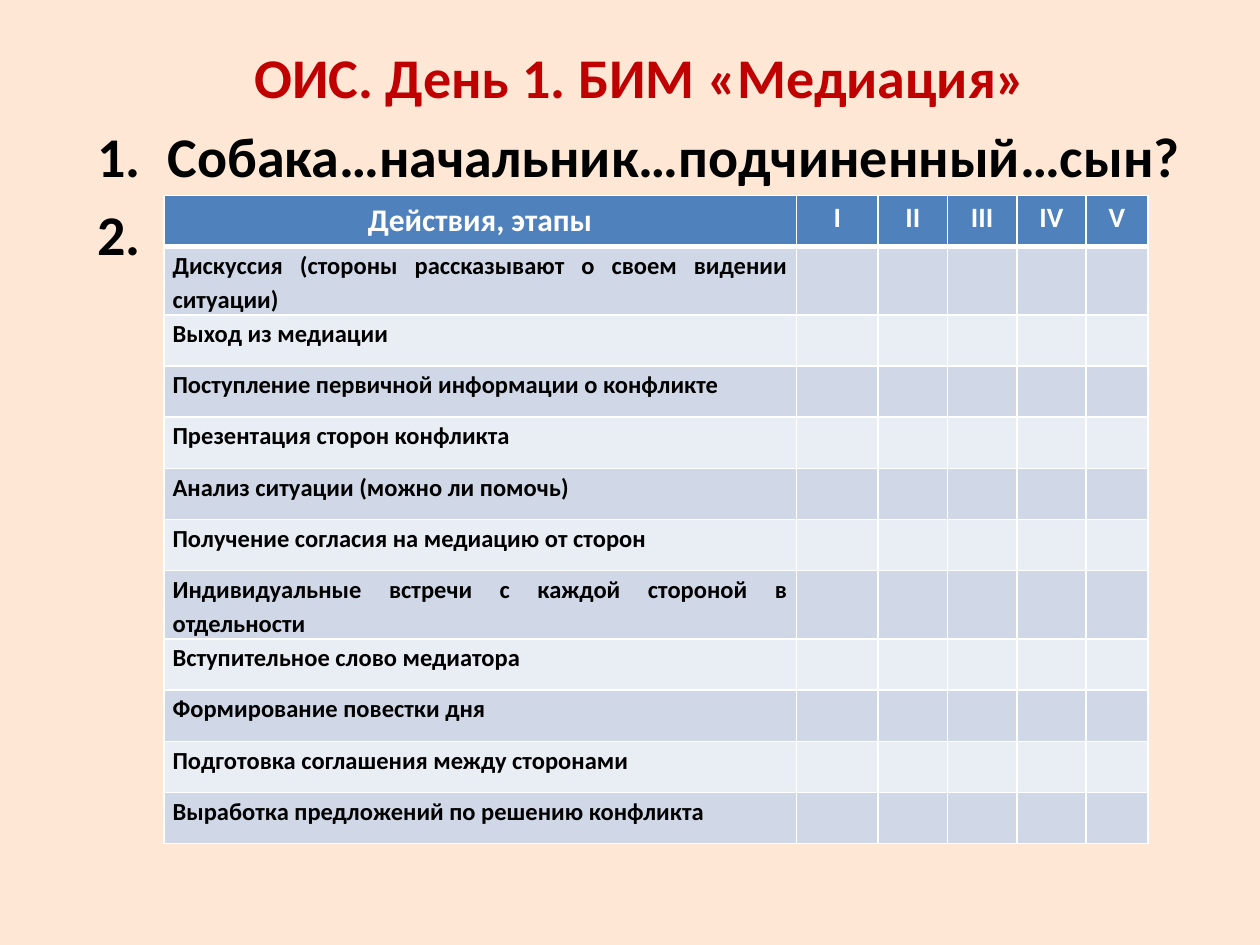
from dataclasses import dataclass

from lxml.etree import SubElement
from pptx import Presentation
from pptx.dml.color import RGBColor as RGB
from pptx.enum.text import PP_ALIGN as Align
from pptx.oxml import parse_xml
from pptx.oxml.ns import nsdecls, qn
from pptx.util import Inches, Pt


@dataclass(frozen=True)
class Theme:
    font: str = "Calibri"
    background: str = "FEE7D4"
    heading: str = "C00000"
    text: str = "000000"
    white: str = "FFFFFF"
    header_fill: str = "4F81BD"
    bands: tuple = ("D0D8E8", "E9EDF4")
    heading_size: int = 32
    actions_size: int = 18
    numeral_size: int = 16
    stage_size: int = 14


theme = Theme()


def style(paragraph, size, color, align):
    paragraph.alignment = align
    for run in paragraph.runs:
        run.font.name = theme.font
        run.font.size = Pt(size)
        run.font.bold = True
        run.font.color.rgb = RGB.from_string(color)


def paint_cell(cell, fill, top, bottom):
    cell.fill.solid()
    cell.fill.fore_color.rgb = RGB.from_string(fill)
    widths = {"lnL": 1, "lnR": 1, "lnT": top, "lnB": bottom}
    for position, (side, width) in enumerate(widths.items()):
        border = parse_xml(
            f'<a:{side} {nsdecls("a")} w="{Pt(width)}"><a:solidFill>'
            f'<a:srgbClr val="{theme.white}"/></a:solidFill></a:{side}>')
        cell._tc.get_or_add_tcPr().insert(position, border)


prs = Presentation()
prs.slide_width, prs.slide_height = Inches(10), Inches(7.5)
slide = prs.slides.add_slide(prs.slide_layouts[1])
slide.background.fill.solid()
slide.background.fill.fore_color.rgb = RGB.from_string(theme.background)

# The heading and the numbered tasks share the body placeholder
unused_title = slide.shapes.title.element
unused_title.getparent().remove(unused_title)
tasks = slide.placeholders[1]
tasks.left, tasks.top = Inches(0.67), Inches(0.29)
tasks.width, tasks.height = Inches(8.83), Inches(6.93)

task_lines = [
    ("ОИС. День 1. БИМ «Медиация»", theme.heading, Align.CENTER, False),
    ("Собака…начальник…подчиненный…сын?", theme.text, Align.JUSTIFY, True),
    ("2.", theme.text, Align.JUSTIFY, False),
]
tasks.text_frame.text = "\n".join(line[0] for line in task_lines)
for paragraph, (_, color, align, numbered) in zip(tasks.text_frame.paragraphs, task_lines):
    properties = paragraph._p.get_or_add_pPr()
    indent = Inches(0.56) if numbered else 0
    properties.set("marL", str(indent))
    properties.set("indent", str(-indent))
    if numbered:
        SubElement(properties, qn("a:buFont"), typeface="+mj-lt")
        SubElement(properties, qn("a:buAutoNum"), type="arabicPeriod")
    else:
        SubElement(properties, qn("a:buNone"))
    style(paragraph, theme.heading_size, color, align)
tasks.text_frame.paragraphs[0].space_before = Pt(0)

# Table of mediation stages
header = ["Действия, этапы", "I", "II", "III", "IV", "V"]
stages = [
    "Дискуссия (стороны рассказывают о своем видении ситуации)",
    "Выход из медиации",
    "Поступление первичной информации о конфликте",
    "Презентация сторон конфликта",
    "Анализ ситуации (можно ли помочь)",
    "Получение согласия на медиацию от сторон",
    "Индивидуальные встречи с каждой стороной в отдельности",
    "Вступительное слово медиатора",
    "Формирование повестки дня",
    "Подготовка соглашения между сторонами",
    "Выработка предложений по решению конфликта",
]
column_widths = [5.02, 0.65, 0.55, 0.55, 0.55, 0.49]
stage_table = slide.shapes.add_table(
    len(stages) + 1, len(header), Inches(1.3), Inches(1.55),
    Inches(sum(column_widths)), Inches(4.86)).table
for column, width in zip(stage_table.columns, column_widths):
    column.width = Inches(width)

for row_index, row in enumerate(stage_table.rows):
    is_header = row_index == 0
    fill = theme.header_fill if is_header else theme.bands[(row_index - 1) % 2]
    for column_index, cell in enumerate(row.cells):
        # A thick rule separates the header from the stages
        paint_cell(cell, fill, 3 if row_index == 1 else 1, 3 if is_header else 1)
        paragraph = cell.text_frame.paragraphs[0]
        if is_header:
            paragraph.text = header[column_index]
            size = theme.numeral_size if column_index else theme.actions_size
            style(paragraph, size, theme.white, Align.CENTER)
        elif column_index == 0:
            paragraph.text = stages[row_index - 1]
            style(paragraph, theme.stage_size, theme.text, Align.JUSTIFY)
        if paragraph.runs and (row_index or column_index):
            cell.margin_left = cell.margin_right = Inches(0.07)
            cell.margin_top = cell.margin_bottom = 0
            paragraph.line_spacing = 1.15

prs.save("out.pptx")
